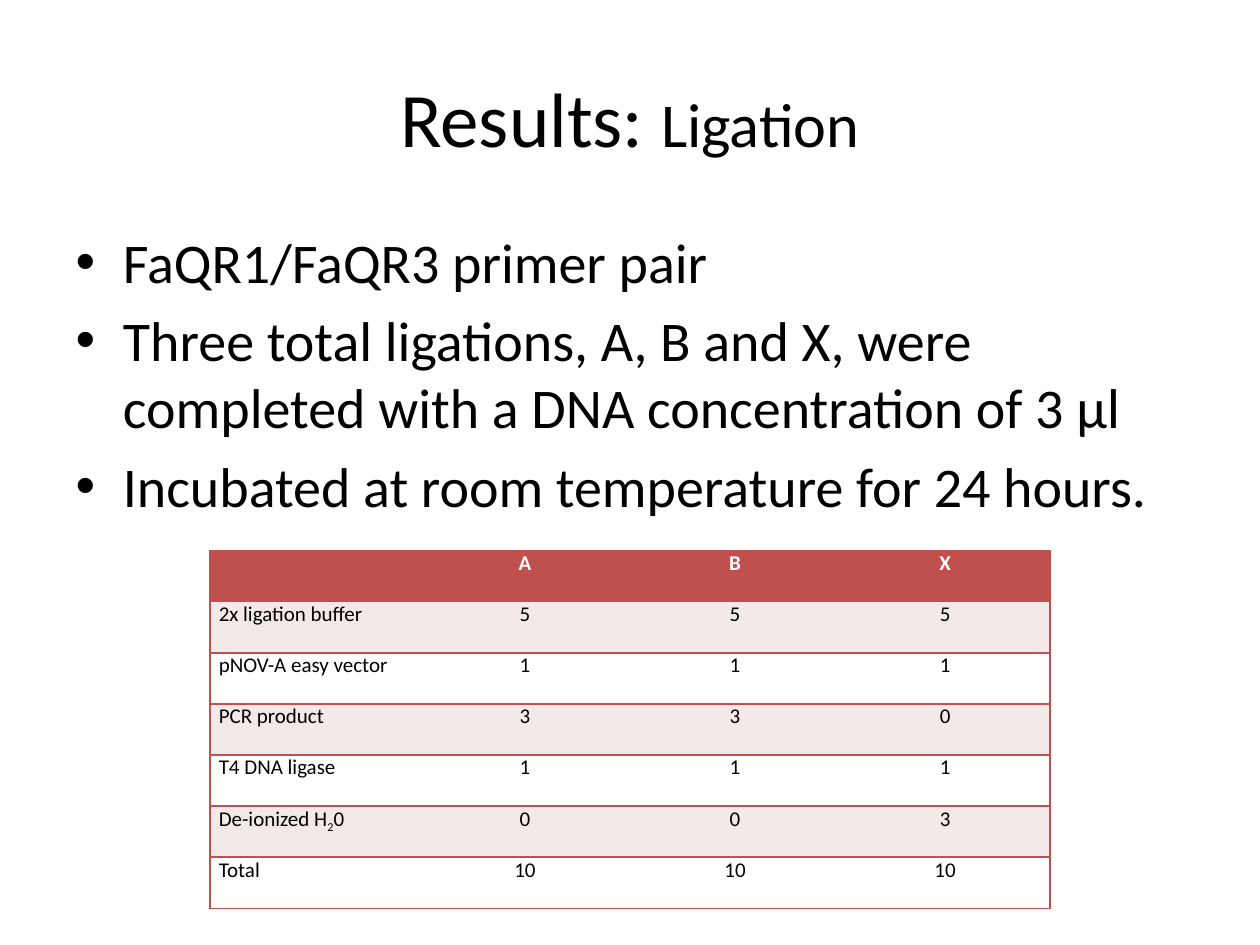
from lxml.etree import SubElement
from pptx import Presentation
from pptx.dml.color import RGBColor
from pptx.enum.text import MSO_ANCHOR, PP_ALIGN
from pptx.oxml.ns import qn
from pptx.util import Cm, Pt

COLORS = {"text": "000000", "header": "C0504D", "header_text": "FFFFFF",
          "band": "F4E9E9", "plain": "FFFFFF"}
FONT = "Calibri"
BULLETS = [
    "FaQR1/FaQR3 primer pair",
    "Three total ligations, A, B and X, were completed with a DNA concentration of 3 µl",
    "Incubated at room temperature for 24 hours.",
]
REACTIONS = [
    ("", "A", "B", "X"),
    ("2x ligation buffer", "5", "5", "5"),
    ("pNOV-A easy vector", "1", "1", "1"),
    ("PCR product", "3", "3", "0"),
    ("T4 DNA ligase", "1", "1", "1"),
    (("De-ionized H", "2", "0"), "0", "0", "3"),
    ("Total", "10", "10", "10"),
]


def color(name):
    return RGBColor.from_string(COLORS[name])


def place(shape, box):
    shape.left, shape.top, shape.width, shape.height = map(Cm, box)


def add_run(paragraph, text, size, color_name="text", bold=False):
    run = paragraph.add_run()
    run.text = text
    run.font.name = FONT
    run.font.size = Pt(size)
    run.font.bold = bold
    run.font.color.rgb = color(color_name)
    return run


def add_title(slide, box):
    title = slide.shapes.title
    place(title, box)
    title.text_frame.vertical_anchor = MSO_ANCHOR.MIDDLE
    paragraph = title.text_frame.paragraphs[0]
    paragraph.alignment = PP_ALIGN.CENTER
    add_run(paragraph, "Results: ", 44)
    add_run(paragraph, "Ligation", 35.6)


def add_bullets(slide, box):
    body = slide.placeholders[1]
    place(body, box)
    frame = body.text_frame
    for index, text in enumerate(BULLETS):
        paragraph = frame.add_paragraph() if index else frame.paragraphs[0]
        paragraph.space_before = Pt(6.4 if index else 0)
        add_run(paragraph, text, 32)


def set_borders(cell, visible_sides):
    properties = cell._tc.get_or_add_tcPr()
    for side in "LRTB":
        line = SubElement(properties, qn(f"a:ln{side}"), w=str(Pt(1)))
        if side in visible_sides:
            fill = SubElement(line, qn("a:solidFill"))
            SubElement(fill, qn("a:srgbClr"), val=COLORS["header"])
        else:
            SubElement(line, qn("a:noFill"))


def fill_cell(cell, content, is_header, is_label):
    cell.margin_left = cell.margin_right = Cm(0.18)
    cell.margin_top = cell.margin_bottom = 0
    cell.vertical_anchor = MSO_ANCHOR.TOP
    paragraph = cell.text_frame.paragraphs[0]
    paragraph.alignment = PP_ALIGN.LEFT if is_label else PP_ALIGN.CENTER
    paragraph.font.size = Pt(12)
    parts = (content,) if isinstance(content, str) else content
    for index, text in enumerate(filter(None, parts)):
        run = add_run(paragraph, text, 12, "header_text" if is_header else "text", is_header)
        if index == 1:
            run._r.get_or_add_rPr().set("baseline", "-25000")


def add_reaction_table(slide, box):
    row_count, column_count = len(REACTIONS), len(REACTIONS[0])
    table = slide.shapes.add_table(row_count, column_count, *map(Cm, box)).table
    table.horz_banding = False
    for column in table.columns:
        column.width = Cm(box[2] / column_count)
    for row_index, values in enumerate(REACTIONS):
        table.rows[row_index].height = Cm(box[3] / row_count)
        fill_name = "header" if row_index == 0 else "band" if row_index % 2 else "plain"
        for column_index, content in enumerate(values):
            cell = table.cell(row_index, column_index)
            is_first, is_last = column_index == 0, column_index == column_count - 1
            set_borders(cell, "TB" + "L" * is_first + "R" * is_last)
            cell.fill.solid()
            cell.fill.fore_color.rgb = color(fill_name)
            fill_cell(cell, content, row_index == 0, is_first)


def main():
    presentation = Presentation()
    presentation.slide_width, presentation.slide_height = Cm(25.4), Cm(19.05)
    slide = presentation.slides.add_slide(presentation.slide_layouts[1])
    add_title(slide, (1.27, 0.76, 22.86, 3.18))
    add_bullets(slide, (1.27, 4.45, 22.86, 12.57))
    add_reaction_table(slide, (4.23, 11.1, 16.94, 7.21))
    presentation.save("out.pptx")


if __name__ == "__main__":
    main()
